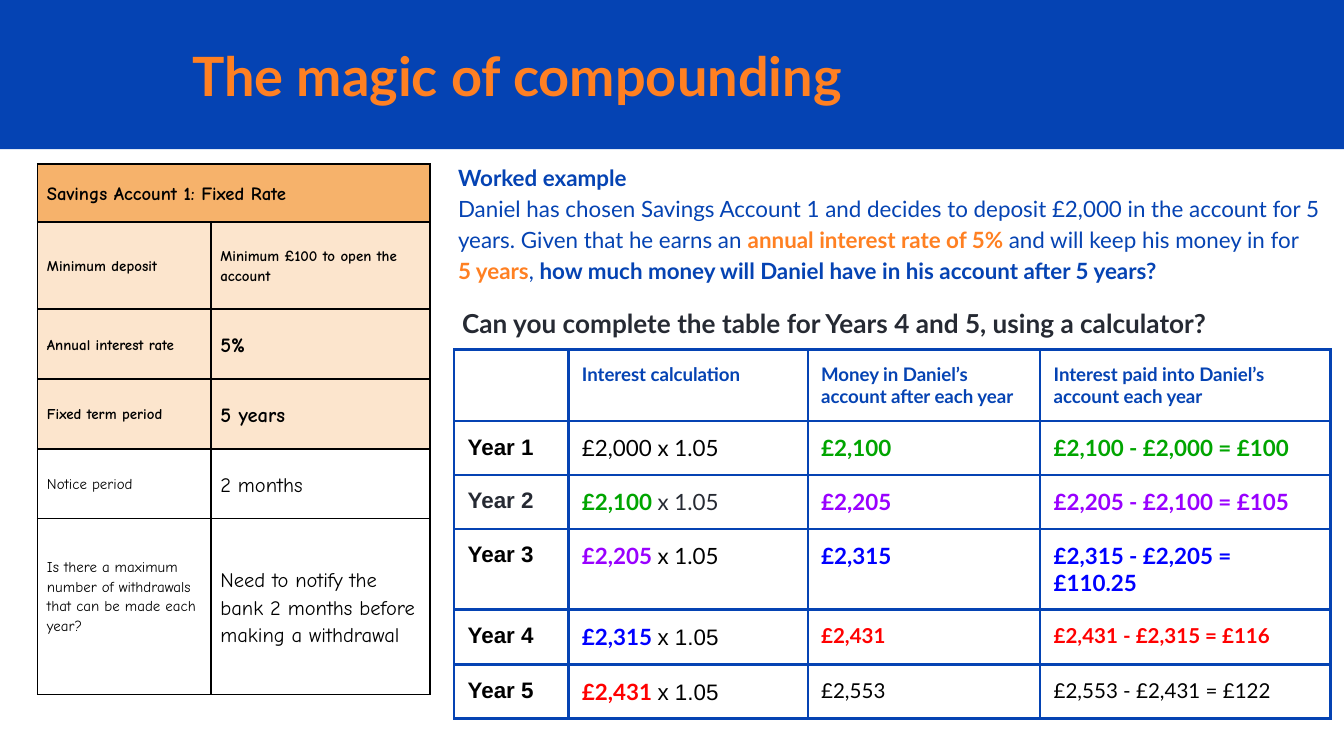
from dataclasses import dataclass
from typing import NamedTuple

from lxml.etree import SubElement
from pptx import Presentation
from pptx.dml.color import RGBColor
from pptx.enum.shapes import MSO_SHAPE as Shape
from pptx.enum.text import MSO_ANCHOR as Anchor, MSO_AUTO_SIZE as AutoSize, PP_ALIGN as Align
from pptx.oxml.ns import qn
from pptx.util import Emu, Pt

BLUE = RGBColor(0x05, 0x43, 0xB3)
ORANGE = RGBColor(0xFF, 0x80, 0x22)
DARK = RGBColor(0x26, 0x2A, 0x33)
BLACK = RGBColor(0, 0, 0)
WHITE = RGBColor(0xFF, 0xFF, 0xFF)
GREEN = RGBColor(0, 0xA5, 0)
PURPLE = RGBColor(0x99, 0, 0xFF)
BRIGHT_BLUE = RGBColor(0, 0, 0xFF)
RED = RGBColor(0xFF, 0, 0)
AMBER = RGBColor(0xF6, 0xB2, 0x6B)
PEACH = RGBColor(0xFC, 0xE5, 0xCD)


def px(length: int) -> Emu:
    """100 px make one inch."""
    return Emu(length * 9144)


class Run(NamedTuple):
    text: str
    color: RGBColor = BLACK
    bold: bool = False
    size: int = 12
    font: str = "Lato"


@dataclass
class Grid:
    left: int
    top: int
    columns: list[int]
    rows: list[int]
    border: RGBColor
    border_width: float
    side_inset: int
    anchor: Anchor
    line_spacing: float


def write_runs(paragraph, runs: list[Run], *, line_spacing: float = 1.0,
               space_before: int = 0, indent: int = 0) -> None:
    """Fill a paragraph; a newline in a run becomes a line break."""
    properties = paragraph._p.get_or_add_pPr()
    properties.set("marL", str(px(indent)))
    properties.set("indent", "0")
    paragraph.alignment = Align.LEFT
    paragraph.line_spacing = line_spacing
    paragraph.space_before = Pt(space_before)
    for item in runs:
        for index, part in enumerate(item.text.split("\n")):
            if index:
                paragraph.add_line_break()
            if not part:
                continue
            run = paragraph.add_run()
            run.text = part
            run.font.name = item.font
            run.font.size = Pt(item.size)
            run.font.bold = item.bold
            run.font.color.rgb = item.color


def set_borders(cell, color: RGBColor, width: float) -> None:
    properties = cell._tc.get_or_add_tcPr()
    for side in ("lnL", "lnR", "lnT", "lnB"):
        line = SubElement(properties, qn(f"a:{side}"), w=str(Pt(width)))
        fill = SubElement(line, qn("a:solidFill"))
        SubElement(fill, qn("a:srgbClr"), val=str(color))


def add_grid(slide, grid: Grid, contents: list[list[list[Run]]], fills: list[RGBColor]):
    """Draw a table; fills holds one colour per row."""
    table = slide.shapes.add_table(
        len(grid.rows), len(grid.columns), px(grid.left), px(grid.top),
        px(sum(grid.columns)), px(sum(grid.rows))).table
    table.first_row = table.horz_banding = False
    for column, width in zip(table.columns, grid.columns):
        column.width = px(width)
    for row, height, cells, color in zip(table.rows, grid.rows, contents, fills):
        row.height = px(height)
        for cell, runs in zip(row.cells, cells):
            set_borders(cell, grid.border, grid.border_width)
            cell.fill.solid()
            cell.fill.fore_color.rgb = color
            cell.vertical_anchor = grid.anchor
            cell.margin_left = cell.margin_right = px(grid.side_inset)
            cell.margin_top = cell.margin_bottom = px(10)
            write_runs(cell.text_frame.paragraphs[0], runs, line_spacing=grid.line_spacing)
    return table


def set_frame(text_frame, anchor: Anchor, auto_size: AutoSize) -> None:
    text_frame.word_wrap = True
    text_frame.auto_size = auto_size
    text_frame.vertical_anchor = anchor
    text_frame.margin_left = text_frame.margin_right = px(10)
    text_frame.margin_top = text_frame.margin_bottom = px(10)


def add_header(slide) -> None:
    band = slide.shapes.add_shape(Shape.RECTANGLE, 0, 0, px(1000), px(111))
    band.shadow.inherit = False
    band.fill.solid()
    band.fill.fore_color.rgb = BLUE
    band.line.fill.background()

    # The title stands in front of the band
    title = slide.shapes.title
    band._element.addnext(title._element)
    title.left, title.top, title.width, title.height = px(133), px(28), px(846), px(56)
    set_frame(title.text_frame, Anchor.MIDDLE, AutoSize.NONE)
    write_runs(title.text_frame.paragraphs[0],
               [Run("The magic of compounding", ORANGE, True, 29)])


def add_worked_example(slide) -> None:
    box = slide.shapes.add_textbox(px(320), px(109), px(680), px(151))
    frame = box.text_frame
    set_frame(frame, Anchor.TOP, AutoSize.SHAPE_TO_FIT_TEXT)
    write_runs(frame.paragraphs[0], [Run("Worked example", BLUE, True)],
               line_spacing=1.15, indent=11)
    write_runs(frame.add_paragraph(), [
        Run("Daniel has chosen Savings Account 1 and decides to deposit £2,000 in the "
            "account for 5 years. Given that he earns an ", BLUE),
        Run("annual interest rate of 5% ", ORANGE, True),
        Run("and will keep his money in for\n", BLUE),
        Run("5 years", ORANGE, True),
        Run(", ", BLUE),
        Run("how much money will Daniel have in his account after 5 years?", BLUE, True),
    ], line_spacing=1.15, indent=11)
    write_runs(frame.add_paragraph(), [
        Run("Can you complete the table for Years 4 and 5, using a calculator?", DARK, True, 14),
    ], line_spacing=1.15, space_before=10, indent=14)


def add_growth_table(slide) -> None:
    headings = ["Interest calculation", "Money in Daniel’s account after each year",
                "Interest paid into Daniel’s account each year"]
    # Opening balance, growth factor, closing balance, interest paid
    years = [
        (Run("£2,000 "), Run("x 1.05"), Run("£2,100", GREEN, True), "£2,100 - £2,000 = £100"),
        (Run("£2,100 ", GREEN, True), Run("x 1.05", DARK),
         Run("£2,205", PURPLE, True), "£2,205 - £2,100 = £105"),
        (Run("£2,205 ", PURPLE, True), Run("x 1.05"),
         Run("£2,315", BRIGHT_BLUE, True), "£2,315 - £2,205 = £110.25"),
        (Run("£2,315 ", BRIGHT_BLUE, True), Run("x 1.05", font="Arial"),
         Run("£2,431", RED, True, 11), "£2,431 - £2,315 = £116"),
        (Run("£2,431 ", RED, True), Run("x 1.05", font="Arial"),
         Run("£2,553", size=11), "£2,553 - £2,431 = £122"),
    ]
    contents = [[[]] + [[Run(heading, BLUE, True, 10)] for heading in headings]]
    for number, (start, factor, money, interest) in enumerate(years, 1):
        label = Run(f"Year {number}", DARK if number == 2 else BLACK, True, font="Arial")
        contents.append([[label], [start, factor], [money], [money._replace(text=interest)]])
    grid = Grid(338, 260, [85, 178, 173, 216], [53, 40, 40, 60, 41, 40],
                BLUE, 1.5, 10, Anchor.TOP, 1.0)
    add_grid(slide, grid, contents, [WHITE] * 6)


def add_account_table(slide) -> None:
    # Label, value, value size, bold
    terms = [
        ("Minimum deposit", "Minimum £100 to open the account", 8, True),
        ("Annual interest rate", "5%", 11, True),
        ("Fixed term period", "5 years", 11, True),
        ("Notice period", "2 months", 11, False),
        ("Is there a maximum number of withdrawals that can be made each year?",
         "Need to notify the bank 2 months before making a withdrawal", 11, False),
    ]
    font = "Comic Neue"
    contents = [[[Run("Savings Account 1: Fixed Rate", BLACK, True, 10, font)], []]]
    for label, value, size, bold in terms:
        contents.append([[Run(label, BLACK, bold, 8, font)],
                         [Run(value, BLACK, bold, size, font)]])
    grid = Grid(28, 122, [129, 163], [43, 65, 52, 52, 52, 131],
                BLACK, 1, 7, Anchor.MIDDLE, 1.15)
    table = add_grid(slide, grid, contents, [AMBER] + [PEACH] * 3 + [WHITE] * 2)
    table.cell(0, 0).merge(table.cell(0, 1))
    # The withdrawals question sits a little above the middle
    table.cell(5, 0).margin_bottom = px(26)


def main() -> None:
    presentation = Presentation()
    presentation.slide_width = px(1000)
    presentation.slide_height = presentation.slide_width * 9 // 16
    slide = presentation.slides.add_slide(presentation.slide_layouts[5])
    add_header(slide)
    add_worked_example(slide)
    add_growth_table(slide)
    add_account_table(slide)
    presentation.save("out.pptx")


if __name__ == "__main__":
    main()
